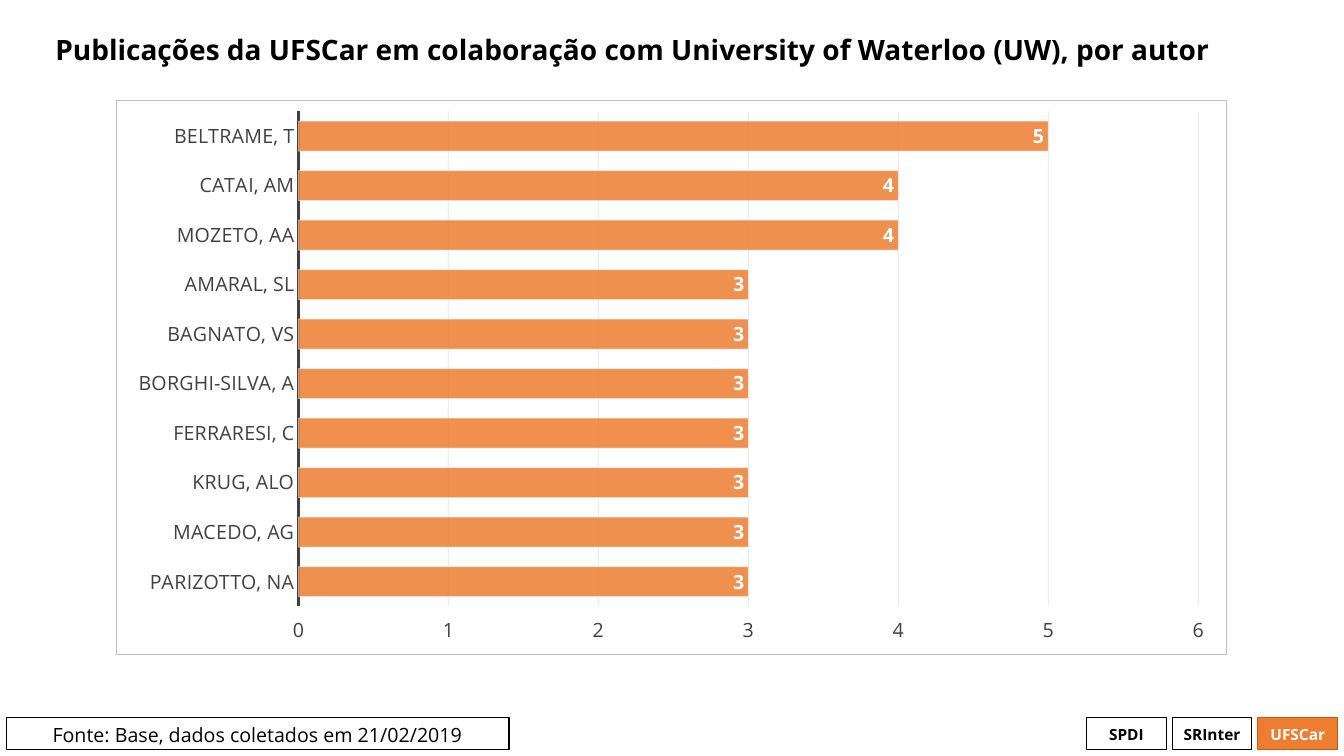
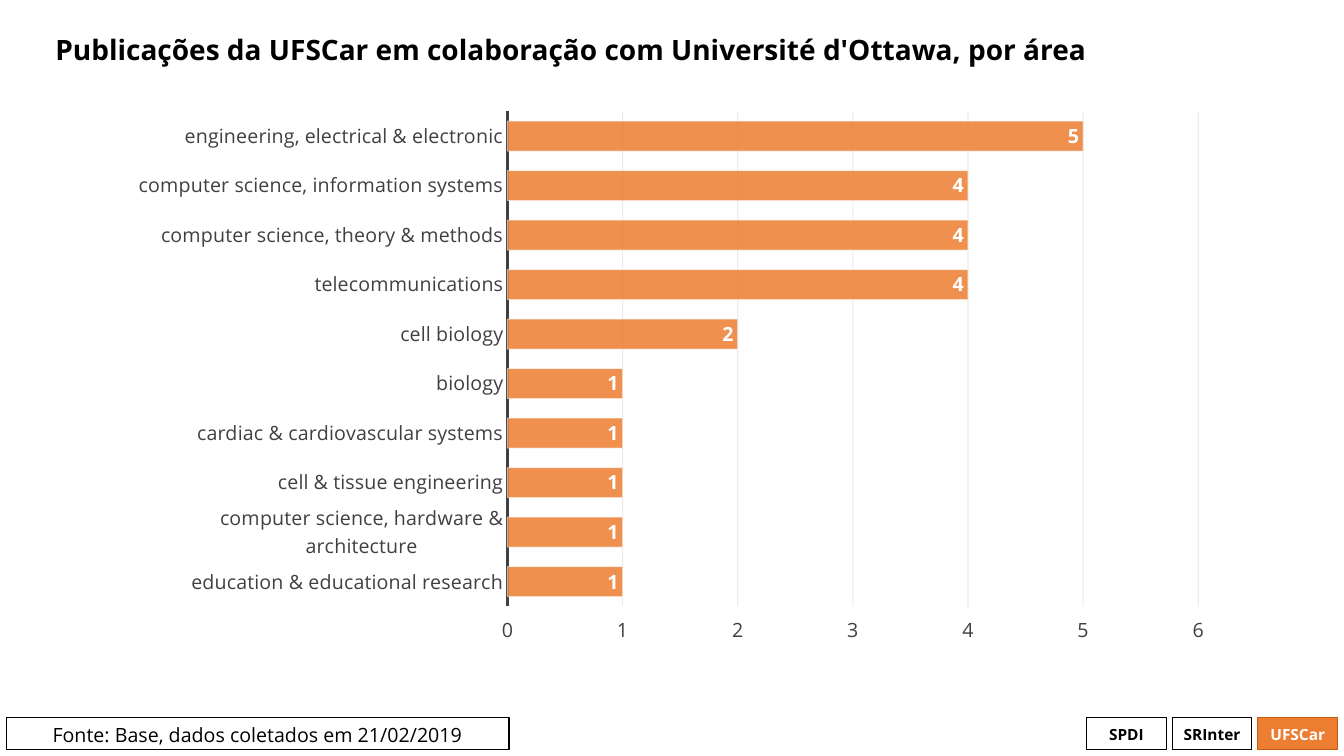
from pptx import Presentation
from pptx.chart.data import CategoryChartData
from pptx.dml.color import RGBColor
from pptx.enum.chart import (XL_CHART_TYPE, XL_LABEL_POSITION,
                             XL_TICK_LABEL_POSITION, XL_TICK_MARK)
from pptx.enum.shapes import MSO_SHAPE
from pptx.enum.text import MSO_ANCHOR, PP_ALIGN
from pptx.oxml import parse_xml
from pptx.oxml.ns import nsdecls
from pptx.util import Inches, Pt

FONT = "Open Sans"
COLORS = {"black": "000000", "white": "FFFFFF", "orange": "ED7D31",
          "rust": "C55A11", "axis": "404040", "grid": "0D0D0D",
          "border": "BFBFBF"}


def rgb(name):
    return RGBColor.from_string(COLORS[name])


def style_font(font, size, color, bold=False):
    font.name, font.size, font.bold = FONT, Pt(size), bold
    font.color.rgb = rgb(color)


def write(tf, text, size=14, color="black", bold=False, align=PP_ALIGN.LEFT,
          anchor=MSO_ANCHOR.MIDDLE, spacing=None):
    tf.word_wrap = True
    tf.vertical_anchor = anchor
    p = tf.paragraphs[0]
    p.alignment = align
    if spacing:
        p.line_spacing = spacing
    r = p.add_run()
    r.text = text
    style_font(r.font, size, color, bold)


def style_line(line, color, width=0.75):
    line.color.rgb = rgb(color)
    line.width = Pt(width)


def set_alpha(root, query, percent):
    for clr in root.xpath(query + "//a:srgbClr"):
        clr.append(parse_xml(
            f'<a:alpha {nsdecls("a")} val="{percent * 1000}"/>'))


class Deck:
    def __init__(self):
        self.prs = Presentation()
        self.prs.slide_width = Inches(40 / 3)
        self.prs.slide_height = Inches(7.5)
        self.s = None

    def slide(self, title):
        self.s = self.prs.slides.add_slide(self.prs.slide_layouts[6])
        self.footer()
        self.title(title)

    def title(self, text):
        sp = self.s.shapes.add_textbox(Inches(0.45), Inches(0.06),
                                       Inches(12.41), Inches(0.91))
        write(sp.text_frame, text, size=20, bold=True, spacing=0.9)

    def box(self, text, left, width, fill=None, line="black", **fmt):
        sp = self.s.shapes.add_shape(MSO_SHAPE.RECTANGLE, Inches(left),
                                     Inches(7.12), Inches(width), Inches(0.32))
        sp.shadow.inherit = False
        if fill:
            sp.fill.solid()
            sp.fill.fore_color.rgb = rgb(fill)
        else:
            sp.fill.background()
        style_line(sp.line, line)
        write(sp.text_frame, text, align=PP_ALIGN.CENTER, **fmt)
        return sp

    def footer(self):
        buttons = [("SPDI", {}), ("SRInter", {}),
                   ("UFSCar", {"fill": "orange", "line": "rust",
                               "color": "white"})]
        for i, (text, look) in enumerate(buttons):
            sp = self.box(text, 10.78 + 0.85 * i, 0.79, size=11, bold=True,
                          **look)
            sp.text_frame.margin_left = sp.text_frame.margin_right = 0
        self.box("Fonte: Base, dados coletados em 21/02/2019", 0.06, 4.99,
                 anchor=MSO_ANCHOR.TOP)

    def bar_chart(self, rows, border):
        data = CategoryChartData()
        data.categories = [name for name, _ in rows]
        data.add_series("Series 1", [value for _, value in rows])
        chart = self.s.shapes.add_chart(
            XL_CHART_TYPE.BAR_CLUSTERED, Inches(1.15), Inches(0.99),
            Inches(11.02), Inches(5.51), data).chart
        chart.has_legend = chart.has_title = False
        style_font(chart.font, 14, "black")

        # Axes: first category on top, scale at the bottom
        cat, val = chart.category_axis, chart.value_axis
        for axis in (cat, val):
            axis.major_tick_mark = axis.minor_tick_mark = XL_TICK_MARK.NONE
            style_font(axis.tick_labels.font, 14, "axis")
        cat.reverse_order = True
        cat.has_major_gridlines = False
        style_line(cat.format.line, "axis", 1.5)
        val.tick_label_position = XL_TICK_LABEL_POSITION.HIGH
        val.minimum_scale, val.maximum_scale, val.major_unit = 0, 6, 1
        val.format.line.fill.background()
        style_line(val.major_gridlines.format.line, "grid")

        # Bars and labels
        plot = chart.plots[0]
        plot.gap_width = 65
        plot.vary_by_categories = False
        series = plot.series[0]
        series.format.fill.solid()
        series.format.fill.fore_color.rgb = rgb("orange")
        style_line(series.format.line, "white")
        labels = series.data_labels
        labels.show_value = True
        labels.position = XL_LABEL_POSITION.INSIDE_END
        style_font(labels.font, 14, "white", bold=True)

        # Transparency and chart frame
        root = chart._chartSpace
        set_alpha(root, ".//c:majorGridlines", 7)
        set_alpha(root, ".//c:ser/c:spPr/a:solidFill", 85)
        set_alpha(root, ".//c:ser/c:spPr/a:ln", 50)
        root.xpath("c:chart")[0].addnext(parse_xml(
            f'<c:spPr {nsdecls("c", "a")}>'
            f'<a:solidFill><a:srgbClr val="{COLORS["white"]}"/></a:solidFill>'
            f'<a:ln w="{Pt(0.75)}"><a:solidFill>'
            f'<a:srgbClr val="{COLORS[border]}"/></a:solidFill></a:ln>'
            '</c:spPr>'))


AUTHORS = [("BELTRAME, T", 5), ("CATAI, AM", 4), ("MOZETO, AA", 4),
           ("AMARAL, SL", 3), ("BAGNATO, VS", 3), ("BORGHI-SILVA, A", 3),
           ("FERRARESI, C", 3), ("KRUG, ALO", 3), ("MACEDO, AG", 3),
           ("PARIZOTTO, NA", 3)]
AREAS = [("engineering, electrical & electronic", 5),
         ("computer science, information systems", 4),
         ("computer science, theory & methods", 4),
         ("telecommunications", 4), ("cell biology", 2), ("biology", 1),
         ("cardiac & cardiovascular systems", 1),
         ("cell & tissue engineering", 1),
         ("computer science, hardware & architecture", 1),
         ("education & educational research", 1)]
SLIDES = [("University of Waterloo (UW), por autor", AUTHORS, "border"),
          ("Université d'Ottawa, por área", AREAS, "white")]


def main():
    deck = Deck()
    for subject, rows, border in SLIDES:
        deck.slide("Publicações da UFSCar em colaboração com " + subject)
        deck.bar_chart(rows, border)
    deck.prs.save("out.pptx")


if __name__ == "__main__":
    main()
